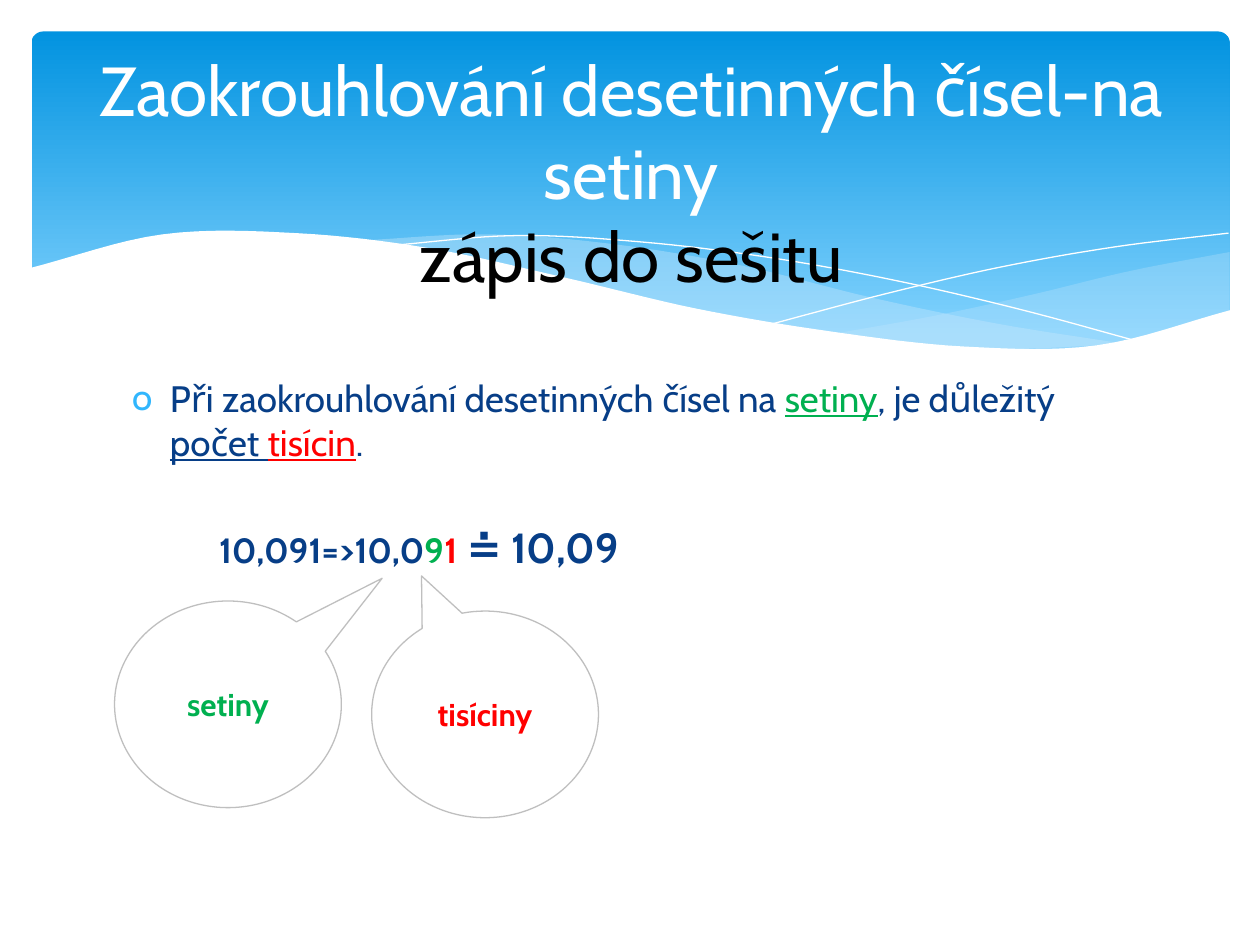
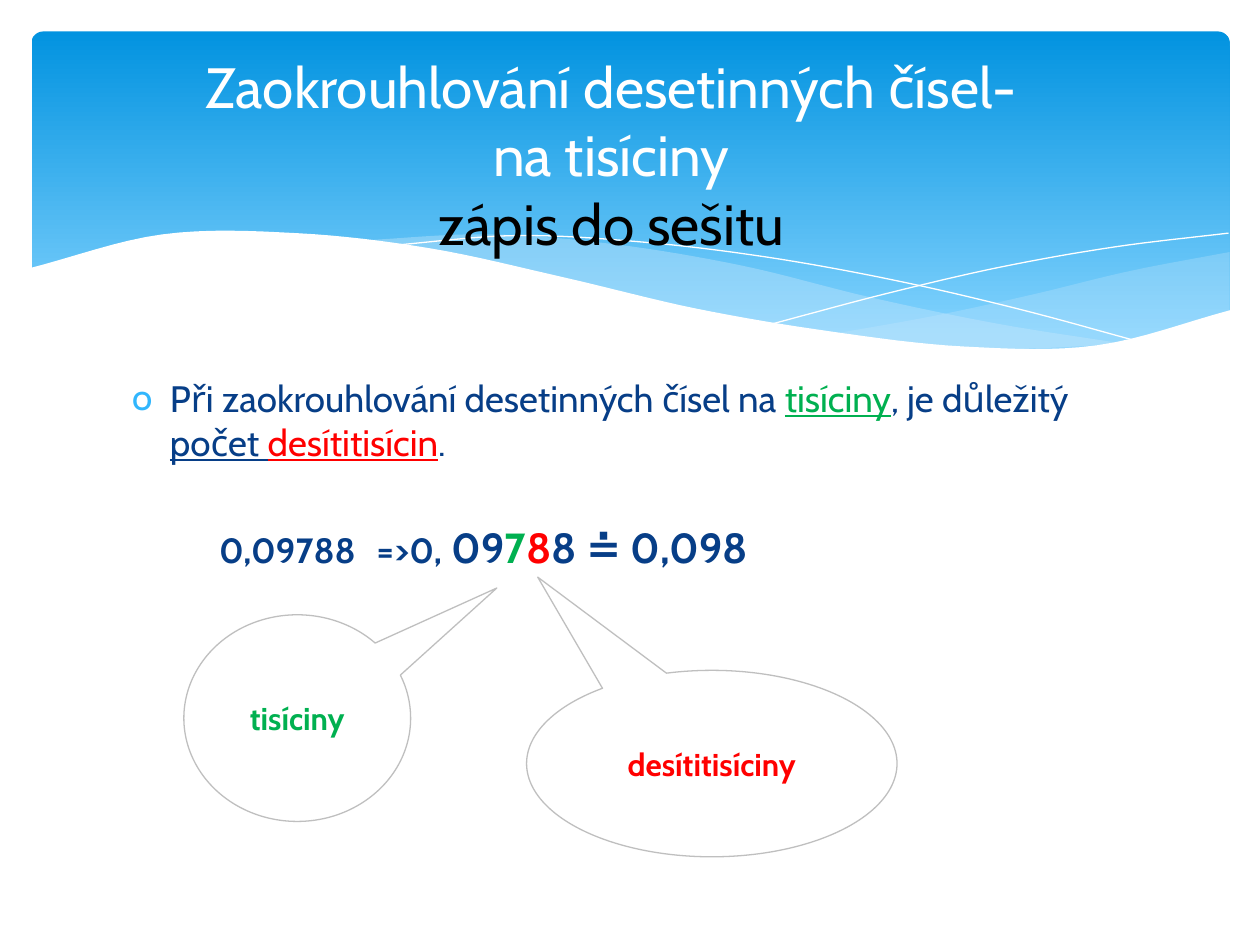
from lxml.etree import SubElement
from pptx import Presentation
from pptx.dml.color import RGBColor
from pptx.enum.shapes import MSO_SHAPE
from pptx.enum.text import MSO_ANCHOR, MSO_AUTO_SIZE, PP_ALIGN
from pptx.oxml.ns import qn
from pptx.util import Inches, Pt

rgb = RGBColor.from_string
FONT = "Cabin"
WHITE, BLACK, NAVY, DEEP = "FFFFFF", "000000", "073E87", "002060"
GREEN, RED, SKY, PALE, GREY = "00B050", "FF0000", "31B6FD", "C6E7FC", "BFBFBF"
BAND_TOP, BAND_BOTTOM = "0293E0", "83D3FE"
CURVE_STEPS = 8


def write(p, text, size, color, bold=False, underline=False):
    for i, part in enumerate(text.split("\n")):
        if i:
            p.add_line_break()
        if part:
            r = p.add_run()
            r.text = part
            r.font.name, r.font.size = FONT, Pt(size)
            r.font.color.rgb = rgb(color)
            r.font.bold, r.font.underline = bold, underline


def smooth_curve(left, right, heights):
    before_first = 2 * heights[0] - heights[1]
    after_last = 2 * heights[-1] - heights[-2]
    knots = [before_first, *heights, after_last]
    gap = (right - left) / (len(heights) - 1)
    points = []
    for i, (a, b, c, d) in enumerate(zip(knots, knots[1:], knots[2:], knots[3:])):
        for step in range(CURVE_STEPS):
            t = step / CURVE_STEPS
            y = b + t * (c - a + t * (2*a - 5*b + 4*c - d + t * (3*b - a - 3*c + d))) / 2
            points.append((left + (i + t) * gap, y))
    return points + [(right, heights[-1])]


prs = Presentation()
prs.slide_width, prs.slide_height = Inches(10), Inches(7.5)
col, row = prs.slide_width // 100, prs.slide_height // 75
layout = prs.slide_layouts[5]

waves = [
    dict(span=(66.1, 97.6), color=PALE, opacity=29,
         upper=[26.5, 25.1, 23.4, 21.5, 20],
         lower=[26.5, 27.4, 27.8, 27.1, 24.7]),
    dict(span=(28.6, 89.3), color=PALE, opacity=40,
         upper=[19.1, 18.6, 19.4, 21.1, 23.6, 25.7, 27.3],
         lower=[19.1, 20.7, 23.1, 25.3, 27, 27.7, 27.3]),
    dict(span=(30.9, 90.7), upper=[19.5, 18.7, 19.2, 20.4, 22.2, 24.5, 27.2]),
    dict(span=(61.3, 97.5), upper=[25.7, 23.3, 21.2, 19.6, 18.5]),
    dict(span=(2.3, 97.7), color=WHITE, opacity=100,
         upper=[21.3, 18.6, 18.5, 19.7, 22, 24.5, 26.3, 27.5, 27.4, 24.6],
         lower=[32.9, 32.9]),
]

slides = [
    dict(
        title="Zaokrouhlování desetinných čísel-na setiny\n",
        title_box=(5.1, 6.8, 90, 13.7), title_size=39.6,
        place="setiny", next_place="tisícin",
        example=[("10,091=>10,0", 20, NAVY), ("9", 20, GREEN), ("1", 20, RED),
                 (" ", 24, DEEP), ("≐ 10,09", 24, NAVY)],
        callouts=[("setiny", GREEN, (9.1, 47.7, 18, 16.4), (0.68, -0.61)),
                  ("tisíciny", RED, (29.5, 48.5, 18, 16.4), (-0.28, -0.67))]),
    dict(
        title="Zaokrouhlování desetinných čísel-\nna tisíciny\n",
        title_box=(3.5, 6, 90, 12.5), title_size=32.4,
        place="tisíciny", next_place="desítitisícin",
        example=[("0,09788\t=>0,", 20, NAVY), (" 09", 24, NAVY), ("7", 24, GREEN),
                 ("8", 24, RED), ("8 ≐ 0,098", 24, NAVY)],
        callouts=[("tisíciny", GREEN, (14.6, 48.8, 18, 16.4), (0.88, -0.63)),
                  ("desítitisíciny", RED, (41.8, 53.2, 29.4, 14.8), (-0.47, -1))]),
]

pages = [prs.slides.add_slide(layout) for data in slides]

shapes = pages[0].shapes
band = shapes.add_shape(MSO_SHAPE.ROUNDED_RECTANGLE, int(2.5 * col), int(2.5 * row),
                        int(95.1 * col), 27 * row)
band.adjustments[0] = 0.034
band.fill.gradient()
band.fill.gradient_angle = 270
first_stop, last_stop = band.fill.gradient_stops
first_stop.color.rgb, first_stop.position = rgb(BAND_TOP), 0
last_stop.color.rgb, last_stop.position = rgb(BAND_BOTTOM), 0.9
band.line.fill.background()

backdrop = [band]
for wave in waves:
    filled = "lower" in wave
    outline = smooth_curve(*wave["span"], wave["upper"])
    if filled:
        outline += reversed(smooth_curve(*wave["span"], wave["lower"]))
    outline = [(x * col, y * row) for x, y in outline]
    builder = shapes.build_freeform(*outline[0])
    builder.add_line_segments(outline[1:], close=filled)
    sp = builder.convert_to_shape()
    if filled:
        sp.fill.solid()
        sp.fill.fore_color.rgb = rgb(wave["color"])
        sp.line.fill.background()
        fill_color = sp.element.spPr.find(".//" + qn("a:srgbClr"))
        SubElement(fill_color, qn("a:alpha"), val=str(wave["opacity"] * 1000))
    else:
        sp.fill.background()
        sp.line.color.rgb = rgb(WHITE)
        sp.line.width = Pt(0)
    backdrop.append(sp)

for sp in backdrop:
    sp.shadow.inherit = False
    layout.shapes.element.append(sp.element)

for s, data in zip(pages, slides):
    title = s.shapes.title
    x, y, w, h = data["title_box"]
    title.left, title.top = int(x * col), int(y * row)
    title.width, title.height = int(w * col), int(h * row)
    tf = title.text_frame
    tf.word_wrap, tf.auto_size = True, MSO_AUTO_SIZE.NONE
    tf.vertical_anchor = MSO_ANCHOR.MIDDLE
    p = tf.paragraphs[0]
    p.alignment = PP_ALIGN.CENTER
    write(p, data["title"], data["title_size"], WHITE)
    write(p, "zápis do sešitu", data["title_size"], BLACK)

    body = s.shapes.add_textbox(int(9.5 * col), int(29.3 * row), 81 * col, int(37.7 * row))
    tf = body.text_frame
    tf.word_wrap = True
    rule, example = tf.paragraphs[0], tf.add_paragraph()
    for p, space, margin, hanging in [(rule, 3.5, 3, 3), (example, 33, 9.4, 2.5)]:
        p.space_before = Pt(space)
        pPr = p._p.get_or_add_pPr()
        pPr.set("marL", str(int(margin * col)))
        pPr.set("indent", str(int(-hanging * col)))

    pPr = rule._p.get_or_add_pPr()
    SubElement(SubElement(pPr, qn("a:buClr")), qn("a:srgbClr"), val=SKY)
    SubElement(pPr, qn("a:buFont"), typeface=FONT)
    SubElement(pPr, qn("a:buChar"), char="o")
    write(rule, "Při zaokrouhlování desetinných čísel na ", 21, NAVY)
    write(rule, data["place"], 21, GREEN, underline=True)
    write(rule, ", je důležitý ", 21, NAVY)
    write(rule, "počet ", 21, NAVY, underline=True)
    write(rule, data["next_place"], 21, RED, underline=True)
    write(rule, ".", 21, NAVY)

    for text, size, color in data["example"]:
        write(example, text, size, color, bold=True)

    for text, color, (x, y, w, h), tip in data["callouts"]:
        sp = s.shapes.add_shape(
            MSO_SHAPE.OVAL_CALLOUT, int(x * col), int(y * row), int(w * col), int(h * row))
        sp.adjustments[0], sp.adjustments[1] = tip
        sp.shadow.inherit = False
        sp.fill.solid()
        sp.fill.fore_color.rgb = rgb(WHITE)
        sp.line.color.rgb = rgb(GREY)
        sp.line.width = Pt(0)
        tf = sp.text_frame
        tf.word_wrap, tf.vertical_anchor = True, MSO_ANCHOR.MIDDLE
        p = tf.paragraphs[0]
        p.alignment = PP_ALIGN.CENTER
        write(p, text, 18, color, bold=True)

prs.save("out.pptx")
